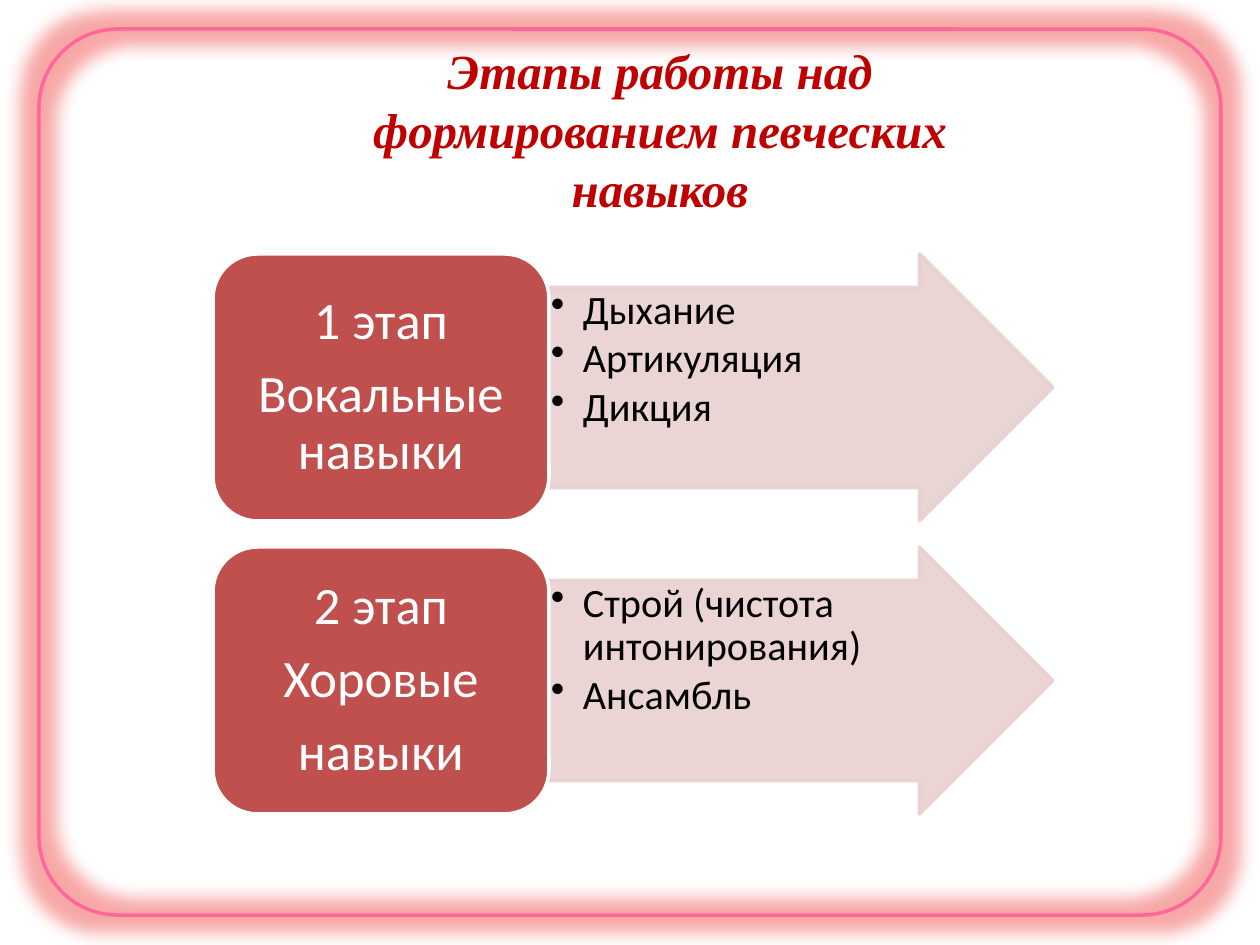
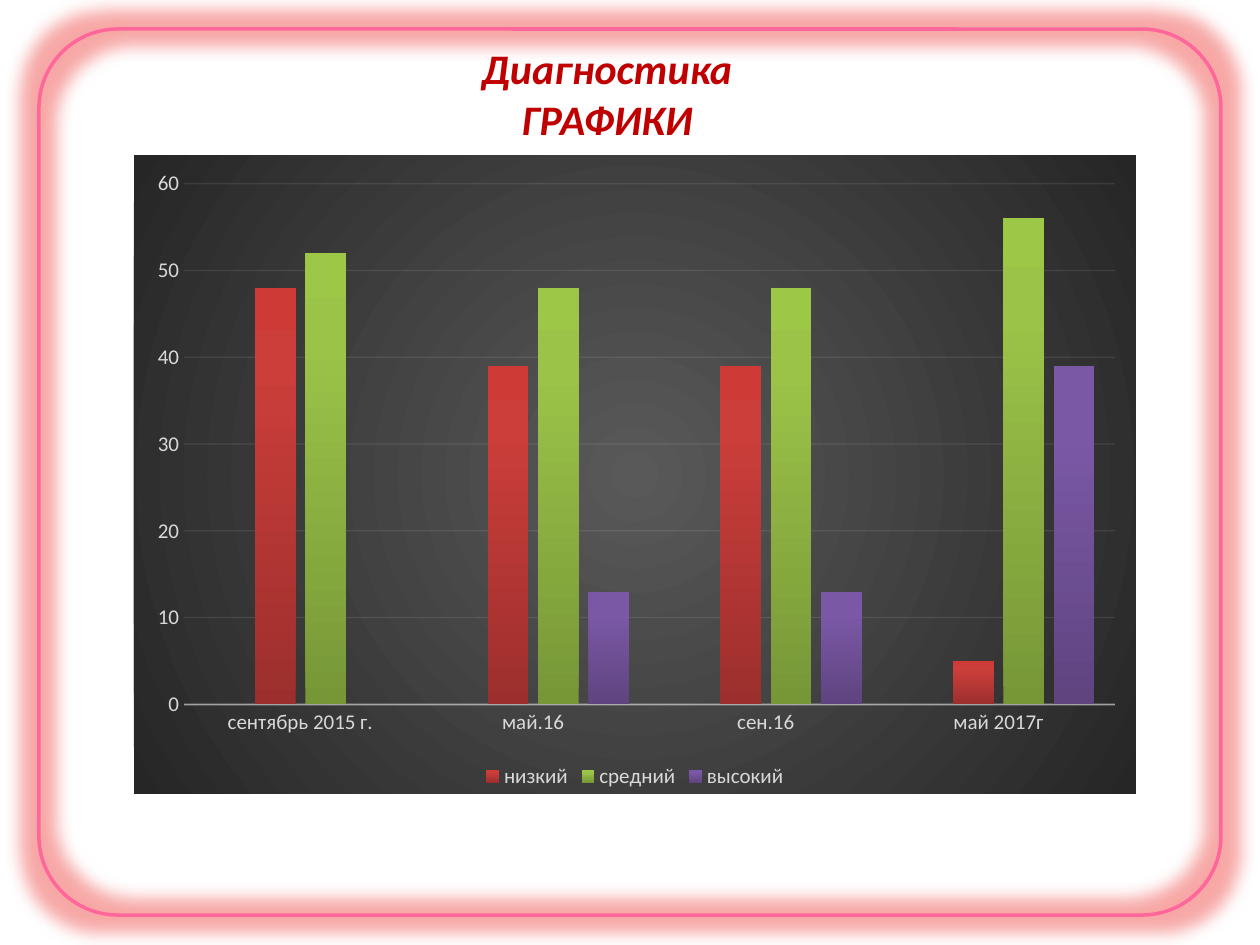
"""Builds two slides on the stages and diagnostics of singing skills."""
from dataclasses import dataclass

from pptx import Presentation
from pptx.chart.data import CategoryChartData
from pptx.dml.color import RGBColor
from pptx.enum.chart import XL_CHART_TYPE as CT, XL_LEGEND_POSITION as LP, XL_TICK_MARK as TM
from pptx.enum.shapes import MSO_SHAPE as MS
from pptx.enum.text import MSO_ANCHOR as MA, MSO_AUTO_SIZE as AS, PP_ALIGN as PA
from pptx.oxml import parse_xml
from pptx.oxml.ns import nsdecls, qn
from pptx.oxml.xmlchemy import OxmlElement
from pptx.util import Emu, Pt


@dataclass(frozen=True)
class Theme:
    """Colours, fonts and type sizes."""
    frame: str = "FF6699"
    glow: str = "EB2722"
    title: str = "C00000"
    stage: str = "C0504D"
    arrow: str = "E8D0D0"
    white: str = "FFFFFF"
    black: str = "000000"
    chart_text: str = "D9D9D9"
    chart_line: str = "F2F2F2"
    backdrop: tuple = ((0, "595959"), (100, "262626"))
    bars: tuple = (
        ((0, "2F5F99"), (80, "3D7CC7"), (100, "3A7CCB")),
        ((0, "9C2F2D"), (80, "CB3E3A"), (100, "CE3B37")),
        ((0, "779737"), (80, "9BC348"), (100, "9DC746")),
        ((0, "5F4480"), (80, "7B58A6"), (100, "7C57A8")),
    )
    body: str = "Calibri"
    serif: str = "Times New Roman"
    stage_size: int = 30
    title_size: int = 28
    subtitle_size: int = 24
    bullet_size: int = 23
    chart_size: int = 12


UPWARD = '<a:lin ang="16200000" scaled="0"/>'
RADIAL = ('<a:path path="circle"><a:fillToRect l="50000" t="50000" '
          'r="50000" b="50000"/></a:path>')


def px(n):
    """Turn pixels into EMU."""
    return Emu(round(n * 914400 / 126))


def rgb(code):
    """Turn a hex code into a colour."""
    return RGBColor.from_string(code)


def fade(root, percent):
    """Make every plain colour under an element partly transparent."""
    for c in root.iter(qn("a:srgbClr")):
        alpha = OxmlElement("a:alpha")
        alpha.set("val", str(percent * 1000))
        c.append(alpha)


def gradient(stops, direction):
    """Return a gradient fill element."""
    gs = "".join(f'<a:gs pos="{pos * 1000}"><a:srgbClr val="{c}"/></a:gs>' for pos, c in stops)
    return parse_xml(f'<a:gradFill {nsdecls("a")} rotWithShape="1">'
                     f'<a:gsLst>{gs}</a:gsLst>{direction}</a:gradFill>')


def set_font(font, name, size, color, bold=False, italic=False):
    """Format a font."""
    font.name, font.size, font.bold, font.italic = name, Pt(size), bold, italic
    font.color.rgb = rgb(color)


def write(tf, lines, align=PA.CENTER, anchor=MA.TOP, inset=(13, 6), spacing=None,
          after=0, bullet=False, **font):
    """Fill a text frame with formatted paragraphs."""
    tf.word_wrap = True
    tf.vertical_anchor = anchor
    tf.margin_left = tf.margin_right = px(inset[0])
    tf.margin_top = tf.margin_bottom = px(inset[1])
    for i, line in enumerate(lines):
        p = tf.add_paragraph() if i else tf.paragraphs[0]
        p.alignment, p.line_spacing, p.space_after = align, spacing, Pt(after)
        if bullet:
            pr = p._p.get_or_add_pPr()
            pr.set("marL", str(px(32)))
            pr.set("indent", str(-px(32)))
            bu = OxmlElement("a:buChar")
            bu.set("char", "•")
            pr.append(bu)
        r = p.add_run()
        r.text = line
        set_font(r.font, **font)


class Deck:
    """Holds the theme and the current slide."""

    def __init__(self, theme):
        """Start an empty 4:3 presentation."""
        self.t = theme
        self.prs = Presentation()
        self.prs.slide_width, self.prs.slide_height = px(1260), px(945)

    def slide(self):
        """Add a blank slide with the glowing frame."""
        self.s = self.prs.slides.add_slide(self.prs.slide_layouts[6])
        sp = self.shape(MS.ROUNDED_RECTANGLE, (39, 29, 1182, 886), None, self.t.frame)
        sp.adjustments[0] = 0.089
        glow = parse_xml(f'<a:glow {nsdecls("a")} rad="228600">'
                         f'<a:srgbClr val="{self.t.glow}"/></a:glow>')
        fade(glow, 40)
        sp.element.spPr.find(qn("a:effectLst")).append(glow)

    def shape(self, kind, at, fill, line):
        """Add a preset shape with a 2 pt outline."""
        sp = self.s.shapes.add_shape(kind, *map(px, at))
        sp.shadow.inherit = False
        if fill:
            sp.fill.solid()
            sp.fill.fore_color.rgb = rgb(fill)
        else:
            sp.fill.background()
        sp.line.color.rgb, sp.line.width = rgb(line), Pt(2)
        return sp

    def title(self, at, lines, name, size):
        """Add a bold italic centred title."""
        tf = self.s.shapes.add_textbox(*map(px, at)).text_frame
        write(tf, lines, name=name, size=size, color=self.t.title, bold=True, italic=True)
        tf.auto_size = AS.SHAPE_TO_FIT_TEXT

    def stage(self, top, heading, skills):
        """Add a stage box and the arrow that lists its skills."""
        t = self.t
        arrow = self.shape(MS.RIGHT_ARROW, (549, top, 504, 267), t.arrow, t.arrow)
        arrow.adjustments[0], arrow.adjustments[1] = 0.75, 0.5
        fade(arrow.element.spPr, 90)
        write(arrow.text_frame, skills, align=PA.LEFT, inset=(2, 2), spacing=0.9, after=3,
              bullet=True, name=t.body, size=t.bullet_size, color=t.black)
        box = self.shape(MS.ROUNDED_RECTANGLE, (213, top, 336, 267), t.stage, t.white)
        write(box.text_frame, heading, anchor=MA.MIDDLE, inset=(15, 8), spacing=0.9,
              after=9.5, name=t.body, size=t.stage_size, color=t.white)

    def columns(self, at, cats, series):
        """Add a clustered column chart on a dark backdrop."""
        t = self.t
        data = CategoryChartData()
        data.categories = cats
        for name, vals in series:
            data.add_series(name, vals)
        chart = self.s.shapes.add_chart(CT.COLUMN_CLUSTERED, *map(px, at), data).chart
        chart.has_title = False
        set_font(chart.font, t.body, t.chart_size, t.chart_text)
        plot = chart.plots[0]
        plot.gap_width, plot.overlap, plot.vary_by_categories = 100, -24, False
        self.axes(chart)
        self.legend(chart)
        self.chart_fills(chart)
        self.plot_layout(chart, x=0.05, y=0.045, w=0.929, h=0.815)

    def axes(self, chart):
        """Style both axes and the gridlines."""
        t = self.t
        cat, val = chart.category_axis, chart.value_axis
        for axis in (cat, val):
            axis.major_tick_mark = axis.minor_tick_mark = TM.NONE
            set_font(axis.tick_labels.font, t.body, t.chart_size, t.chart_text)
        val.minimum_scale, val.maximum_scale, val.major_unit = 0, 60, 10
        val.format.line.fill.background()
        grid = val.major_gridlines.format.line
        for line, width in ((cat.format.line, 1), (grid, 0.75)):
            line.color.rgb, line.width = rgb(t.chart_line), Pt(width)
        fade(chart.element.xpath(".//c:catAx/c:spPr")[0], 54)
        fade(chart.element.xpath(".//c:majorGridlines")[0], 10)

    def legend(self, chart):
        """Put the legend below and leave out the empty first series."""
        chart.has_legend = True
        chart.legend.position, chart.legend.include_in_layout = LP.BOTTOM, False
        set_font(chart.legend.font, self.t.body, self.t.chart_size, self.t.chart_text)
        entry = parse_xml(f'<c:legendEntry {nsdecls("c")}><c:idx val="0"/>'
                          '<c:delete val="1"/></c:legendEntry>')
        chart.element.xpath(".//c:legendPos")[0].addnext(entry)

    def chart_fills(self, chart):
        """Give the bars and the backdrop their gradients."""
        for ser, stops in zip(chart.element.iter(qn("c:ser")), self.t.bars):
            ser.get_or_add_spPr().append(gradient(stops, UPWARD))
        sp_pr = parse_xml(f'<c:spPr {nsdecls("c", "a")}><a:ln><a:noFill/></a:ln></c:spPr>')
        sp_pr.insert(0, gradient(self.t.backdrop, RADIAL))
        chart.element.find(qn("c:chart")).addnext(sp_pr)

    def plot_layout(self, chart, **box):
        """Fix the inner plot area as fractions of the chart."""
        area = chart.element.xpath(".//c:plotArea")[0]
        for old in area.findall(qn("c:layout")):
            area.remove(old)
        modes = "".join(f'<c:{k}Mode val="edge"/>' for k in "xy")
        sizes = "".join(f'<c:{k} val="{v}"/>' for k, v in box.items())
        area.insert(0, parse_xml(
            f'<c:layout {nsdecls("c")}><c:manualLayout><c:layoutTarget val="inner"/>'
            f'{modes}{sizes}</c:manualLayout></c:layout>'))


def main():
    """Build and save the deck."""
    t = Theme()
    deck = Deck(t)

    deck.slide()
    stages = (
        (("1 этап", "Вокальные навыки"), ("Дыхание", "Артикуляция", "Дикция")),
        (("2 этап", "Хоровые", "навыки"), ("Строй (чистота интонирования)", "Ансамбль")),
    )
    for i, (heading, skills) in enumerate(stages):
        deck.stage(254 + 293 * i, heading, skills)
    deck.title((301, 35, 718, 242), ["Этапы работы над формированием певческих навыков"],
               t.serif, t.title_size)

    deck.slide()
    deck.title((292, 37, 630, 115), ["Диагностика", "ГРАФИКИ"], t.body, t.subtitle_size)
    deck.columns((134, 155, 1002, 639),
                 ("сентябрь 2015 г.", "май.16", "сен.16", "май 2017г"),
                 (("Series 1", (None,) * 4),
                  ("низкий", (48, 39, 39, 5)),
                  ("средний", (52, 48, 48, 56)),
                  ("высокий", (0, 13, 13, 39))))

    deck.prs.save("out.pptx")


if __name__ == "__main__":
    main()
